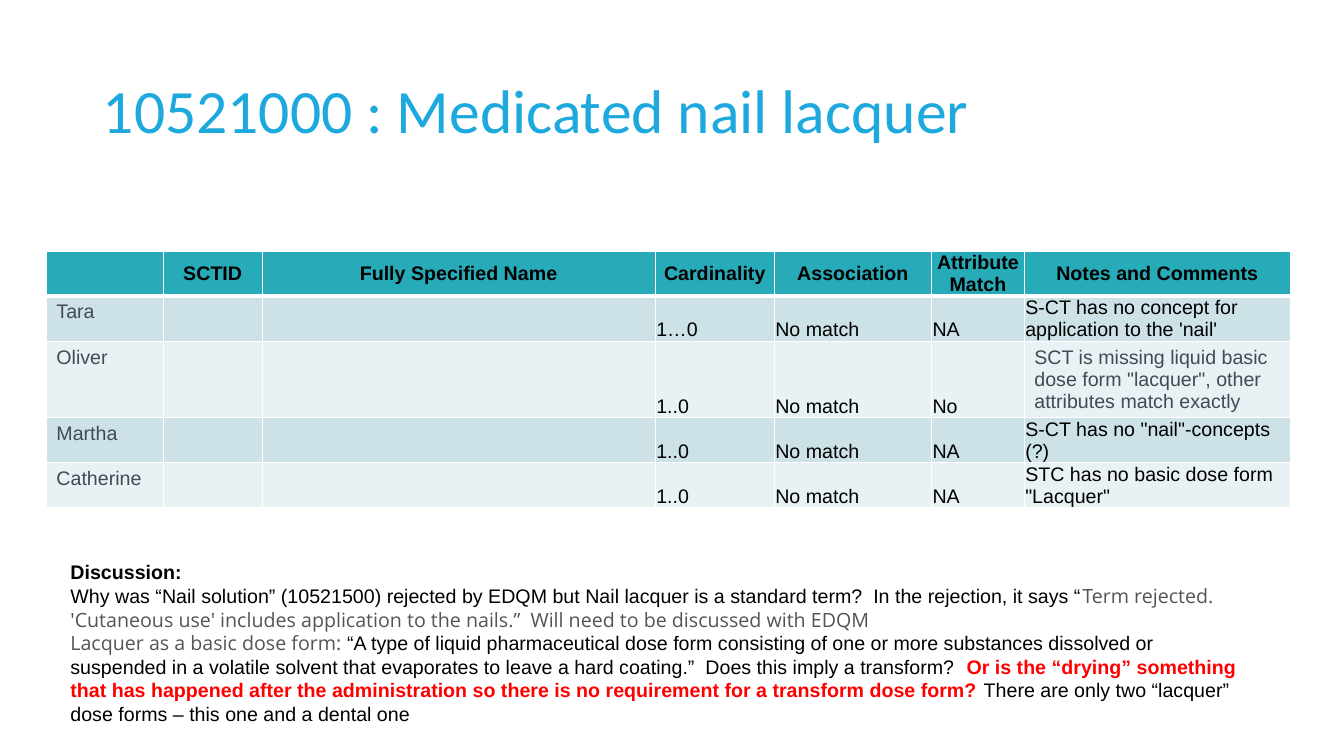
from lxml import etree
from pptx import Presentation
from pptx.dml.color import RGBColor
from pptx.enum.text import MSO_ANCHOR, MSO_AUTO_SIZE, PP_ALIGN
from pptx.oxml.ns import qn
from pptx.util import Inches, Pt

LEFT, CENTER = PP_ALIGN.LEFT, PP_ALIGN.CENTER
TOP, MIDDLE, BOTTOM = MSO_ANCHOR.TOP, MSO_ANCHOR.MIDDLE, MSO_ANCHOR.BOTTOM
GROW, FIXED = MSO_AUTO_SIZE.SHAPE_TO_FIT_TEXT, MSO_AUTO_SIZE.NONE

COLORS = {
    "title": "1DA8DE", "head": "27ABB8", "odd": "CDE2E6", "even": "E8F1F3",
    "line": "FFFFFF", "black": "000000", "slate": "424A55",
    "gray": "545454", "red": "FF0000",
}
WIDTHS = [1.16, 0.98, 3.9, 1.18, 1.56, 0.92, 2.64]
ROW = 0.42
ROWS = [
    ["", "SCTID", "Fully Specified Name", "Cardinality", "Association",
     "Attribute Match", "Notes and Comments"],
    ["Tara", "", "", "1…0", "No match", "NA",
     "S-CT has no concept for application to the 'nail'"],
    ["Oliver", "", "", "1..0", "No match", "No",
     'SCT is missing liquid basic dose form "lacquer", other attributes '
     'match exactly'],
    ["Martha", "", "", "1..0", "No match", "NA",
     'S-CT has no "nail"-concepts (?)'],
    ["Catherine", "", "", "1..0", "No match", "NA",
     'STC has no basic dose form "Lacquer"'],
]
ROOMY = {(2, 6)}  # note cell with wide margins, besides the name column

# Lines of the discussion, each a list of (text, font, color, bold)
TALK = [
    [("Discussion:", "Arial", "black", True)],
    [("Why was “Nail solution” (10521500) rejected by EDQM but Nail lacquer "
      "is a standard term?  In the rejection, it says “",
      "Arial", "black", False),
     ("Term rejected. 'Cutaneous use' includes application to the nails.”  "
      "Will need to be discussed with EDQM", "Open Sans", "gray", False)],
    [("Lacquer as a basic dose form: ", "Open Sans", "gray", False),
     ("“A type of liquid pharmaceutical dose form consisting of one or more "
      "substances dissolved or suspended in a volatile solvent that "
      "evaporates to leave a hard coating.”  Does this imply a transform?  ",
      "Arial", "black", False),
     ("Or is the “drying” something that has happened after the "
      "administration so there is no requirement for a transform dose form? ",
      "Arial", "red", True),
     ("There are only two “lacquer” dose forms – this one and a dental one",
      "Arial", "black", False)],
]


def set_font(font, name, size, color, bold=False):
    font.name, font.size, font.bold = name, Pt(size), bold
    font.color.rgb = RGBColor.from_string(COLORS[color])


def add_title(slide, text):
    title = slide.shapes.title
    title.left, title.top = Inches(0.92), Inches(0.4)
    title.width, title.height = Inches(11.5), Inches(1.45)
    frame = title.text_frame
    frame.text = text
    frame.auto_size, frame.vertical_anchor = FIXED, MIDDLE
    para = frame.paragraphs[0]
    para.alignment, para.line_spacing = LEFT, 0.9
    set_font(para.font, "Calibri", 44, "title")


def add_edges(cell, top, low):
    props = cell._tc.get_or_add_tcPr()
    for side, width in (("L", 1), ("R", 1), ("T", top), ("B", low)):
        edge = etree.SubElement(props, qn(f"a:ln{side}"), w=str(Pt(width)))
        fill = etree.SubElement(edge, qn("a:solidFill"))
        etree.SubElement(fill, qn("a:srgbClr"), val=COLORS["line"])


def fill_cell(cell, text, row, col):
    head = row == 0
    roomy = not head and (col == 0 or (row, col) in ROOMY)
    add_edges(cell, 3 if row == 1 else 1, 3 if head else 1)
    shade = "head" if head else "odd" if row % 2 else "even"
    cell.fill.solid()
    cell.fill.fore_color.rgb = RGBColor.from_string(COLORS[shade])
    if not roomy:
        cell.margin_left = cell.margin_right = cell.margin_top = Inches(0.01)
        cell.margin_bottom = 0
    cell.vertical_anchor = MIDDLE if head else TOP if roomy else BOTTOM
    cell.text = text
    para = cell.text_frame.paragraphs[0]
    para.alignment = CENTER if head else LEFT
    set_font(para.font, "Arial", 14, "slate" if roomy else "black", head)


def add_grid(slide):
    table = slide.shapes.add_table(
        len(ROWS), len(WIDTHS), Inches(0.46), Inches(2.49),
        Inches(sum(WIDTHS)), Inches(ROW * len(ROWS))).table
    for col, width in zip(table.columns, WIDTHS):
        col.width = Inches(width)
    for r, texts in enumerate(ROWS):
        for c, text in enumerate(texts):
            fill_cell(table.cell(r, c), text, r, c)


def add_talk(slide):
    box = slide.shapes.add_textbox(
        Inches(0.6), Inches(5.51), Inches(11.95), Inches(2.22))
    frame = box.text_frame
    frame.word_wrap, frame.auto_size = True, GROW
    para = frame.paragraphs[0]
    for i, line in enumerate(TALK):
        if i:
            para.add_line_break()
        for text, name, color, bold in line:
            run = para.add_run()
            run.text = text
            set_font(run.font, name, 14, color, bold)


def main():
    deck = Presentation()
    deck.slide_width, deck.slide_height = Inches(13.33), Inches(7.5)
    slide = deck.slides.add_slide(deck.slide_layouts[5])
    add_title(slide, "10521000 : Medicated nail lacquer")
    add_grid(slide)
    add_talk(slide)
    deck.save("out.pptx")


if __name__ == "__main__":
    main()
